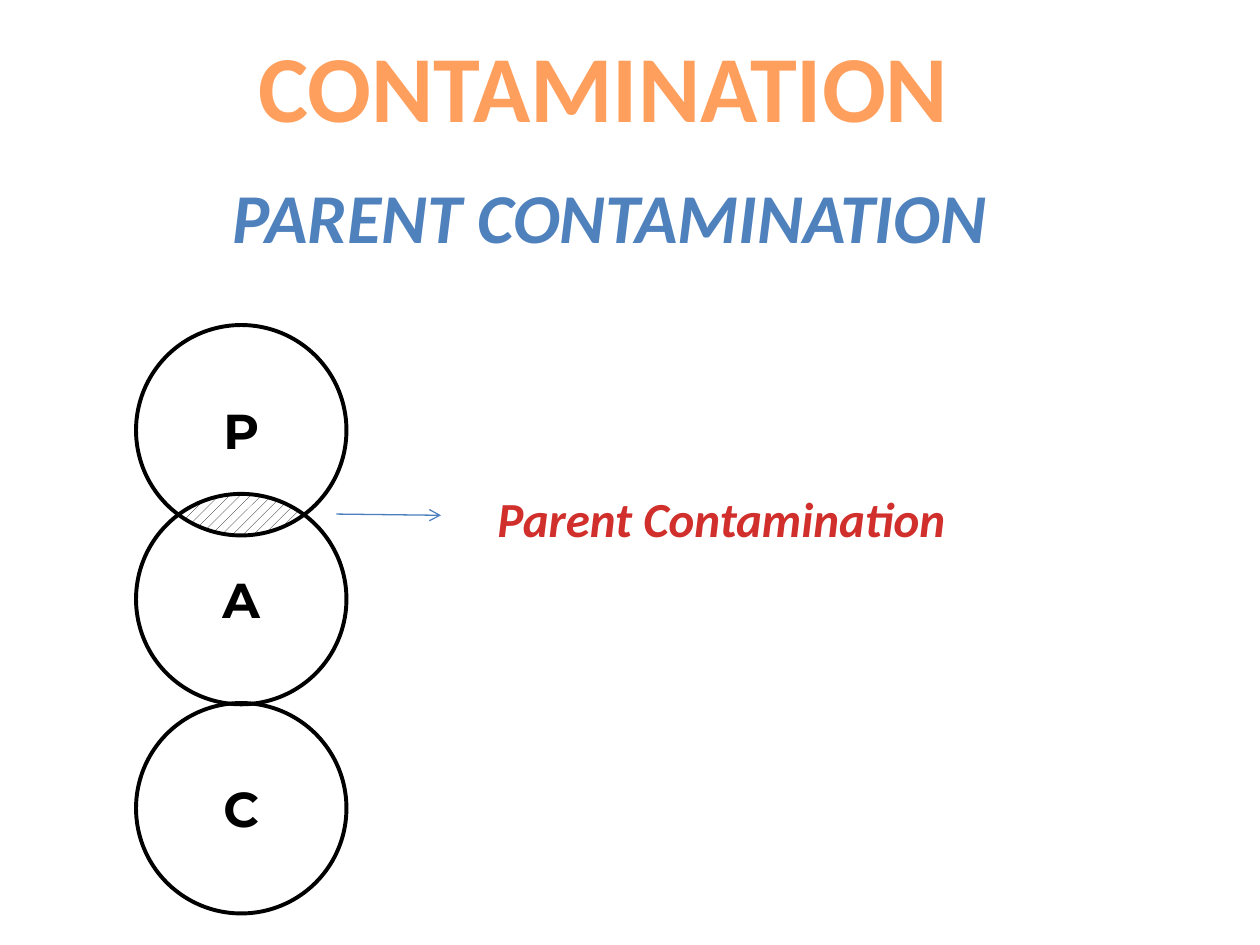
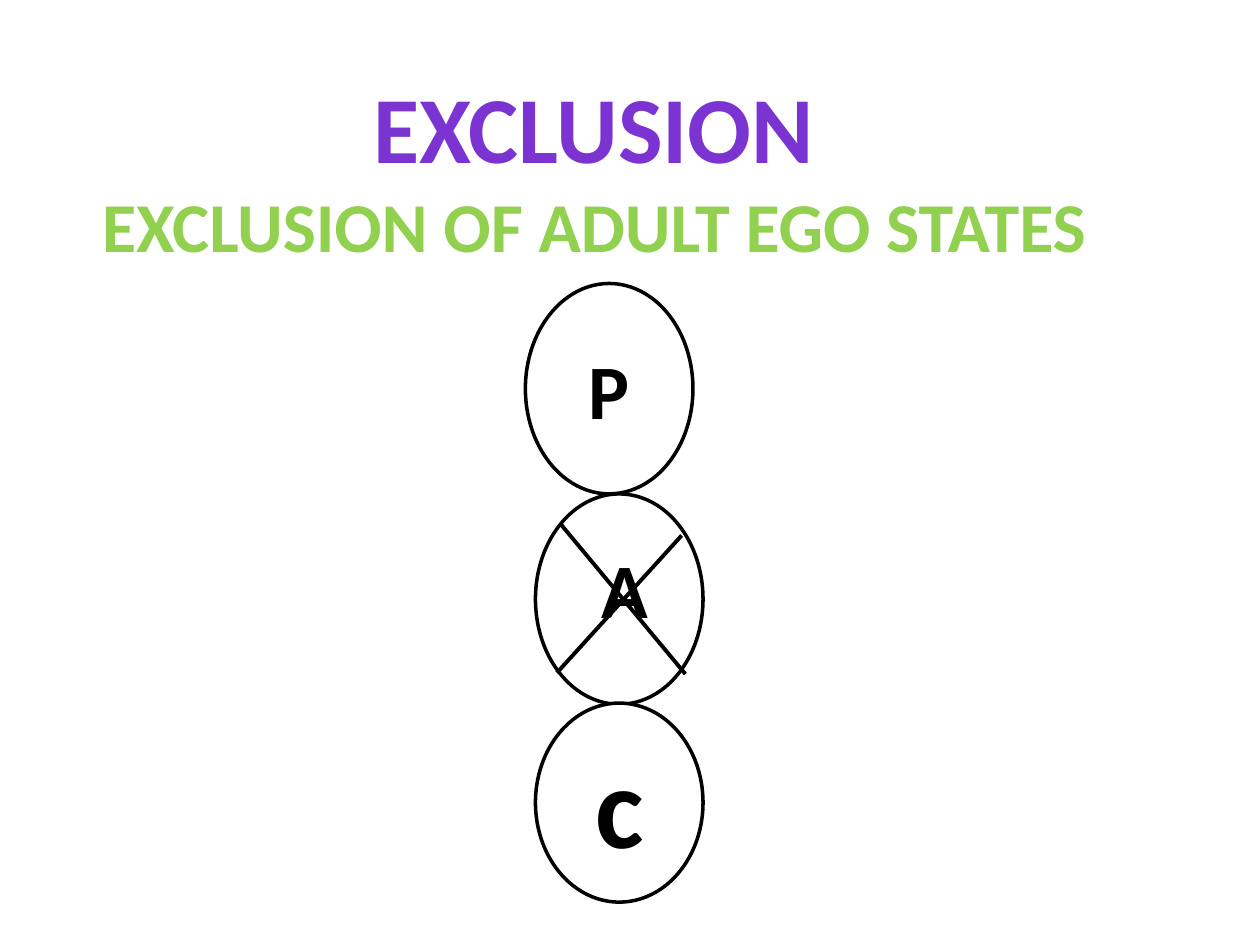
import math
from pptx import Presentation
from pptx import util as u
from pptx.dml.color import RGBColor
from pptx.enum import dml, shapes, text
from pptx.oxml.ns import qn
from lxml import etree

# Content
COLORS = dict(black="000000", white="FFFFFF", orange="FF9F5D", red="D02F2C",
              blue="4F81BD", arrow="4B7EBC", purple="7B34D2", green="92D050")
TITLE = dict(size=54, color="orange")
SUBTITLE = dict(size=40, color="blue")
LABEL = dict(size=44, color="black")
STATE = dict(size=28, color="black", name="Montserrat")

CONTAMINATION = dict(
    title=[("CONTAMINATION", TITLE)], title_box=(1.92, 0.17, 5.74, 1.01),
    texts=[("Parent Contamination", (3.83, 3.83, 3.79, 0.57),
            dict(size=28, color="red", italic=True)),
           ("PARENT CONTAMINATION", (0.92, 1.33, 7.83, 0.77),
            dict(SUBTITLE, italic=True))])
EXCLUSION = dict(
    title=[("EXCLUSION", dict(TITLE, color="purple")),
           ("EXCLUSION OF ADULT EGO STATES", dict(SUBTITLE, color="green"))],
    title_box=(0.67, 0.5, 8.09, 1.68),
    texts=[("A", (4.67, 4.25, 0.58, 0.84), LABEL)])

# Circle stack: diameter, left edge, and top of each state
DIAM, STACK_X = 1.67, 1.08
STATE_TOPS = {"P": 2.58, "A": 3.92, "C": 5.58}
# Ovals: label, left, top, height, format
OVAL_W = 1.33
OVALS = [("", 4.25, 3.92, 1.67, LABEL), ("P", 4.17, 2.25, 1.67, LABEL),
         ("c", 4.25, 5.58, 1.58, dict(LABEL, size=66))]
CROSS = [(4.45, 4.16, 5.44, 5.35), (4.42, 5.34, 5.41, 4.25)]


def rgb(name):
    return RGBColor.from_string(COLORS[name])


def inches(values):
    return [u.Inches(v) for v in values]


def write(tf, lines, wrap=False, anchor=text.MSO_ANCHOR.TOP):
    tf.word_wrap = wrap
    tf.vertical_anchor = anchor
    for i, (words, fmt) in enumerate(lines):
        p = tf.paragraphs[0] if i == 0 else tf.add_paragraph()
        p.alignment = text.PP_ALIGN.CENTER
        r = p.add_run()
        r.text = words
        style = dict(dict(name="Calibri", bold=True), **fmt)
        r.font.color.rgb = rgb(style.pop("color"))
        style["size"] = u.Pt(style["size"])
        for key, value in style.items():
            setattr(r.font, key, value)


def add_oval(s, box, label, fmt, width, fill=None, wrap=False):
    sp = s.shapes.add_shape(shapes.MSO_SHAPE.OVAL, *inches(box))
    sp.shadow.inherit = False
    if fill:
        sp.fill.solid()
        sp.fill.fore_color.rgb = rgb(fill)
    else:
        sp.fill.background()
    sp.line.color.rgb = rgb("black")
    sp.line.width = u.Pt(width)
    if label:
        write(sp.text_frame, [(label, fmt)], wrap, text.MSO_ANCHOR.MIDDLE)


def add_line(s, ends, color, width, arrow=False):
    c = s.shapes.add_connector(shapes.MSO_CONNECTOR.STRAIGHT, *inches(ends))
    c.line.color.rgb = rgb(color)
    c.line.width = u.Pt(width)
    if arrow:
        etree.SubElement(c.line._get_or_add_ln(), qn("a:tailEnd"), type="arrow")
    etree.SubElement(c._element.spPr, qn("a:effectLst"))


def add_overlap(s):
    """Hatch the lens where the Parent and Adult circles meet."""
    rad = DIAM / 2
    half = (STATE_TOPS["A"] - STATE_TOPS["P"]) / 2
    cx, cy = STACK_X + rad, STATE_TOPS["P"] + rad + half
    reach = math.acos(half / rad)
    angles = [reach * (i / 12 - 1) for i in range(25)]
    upper = [(cx + rad * math.sin(a), cy + half - rad * math.cos(a)) for a in angles]
    lower = [(x, 2 * cy - y) for x, y in reversed(upper)]
    points = [inches(pt) for pt in upper + lower[1:-1]]
    fb = s.shapes.build_freeform(*points[0])
    fb.add_line_segments(points[1:])
    sp = fb.convert_to_shape()
    sp.shadow.inherit = False
    sp.line.fill.background()
    sp.fill.patterned()
    sp.fill.pattern = dml.MSO_PATTERN.PERCENT_20
    sp.fill.fore_color.rgb = rgb("black")
    sp.fill.back_color.rgb = rgb("white")


def add_slide(prs, content):
    s = prs.slides.add_slide(prs.slide_layouts[5])
    title = s.shapes.title
    title.left, title.top, title.width, title.height = inches(content["title_box"])
    write(title.text_frame, content["title"], wrap=len(content["title"]) == 1)
    return s


def add_texts(s, content):
    for words, box, fmt in content["texts"]:
        write(s.shapes.add_textbox(*inches(box)).text_frame, [(words, fmt)])


def main():
    prs = Presentation()
    prs.slide_width, prs.slide_height = inches((10, 7.5))

    # Contamination: overlapping circles
    s = add_slide(prs, CONTAMINATION)
    add_line(s, (2.67, 4.08, 3.5, 4.09), "arrow", 0.75, arrow=True)
    add_overlap(s)
    for label, top in STATE_TOPS.items():
        add_oval(s, (STACK_X, top, DIAM, DIAM), label, STATE, 2.25)
    add_texts(s, CONTAMINATION)

    # Exclusion: crossed-out Adult
    s = add_slide(prs, EXCLUSION)
    for label, left, top, height, fmt in OVALS:
        add_oval(s, (left, top, OVAL_W, height), label, fmt, 2, "white", True)
    for ends in CROSS:
        add_line(s, ends, "black", 2.25)
    add_texts(s, EXCLUSION)

    prs.save("out.pptx")


if __name__ == "__main__":
    main()
